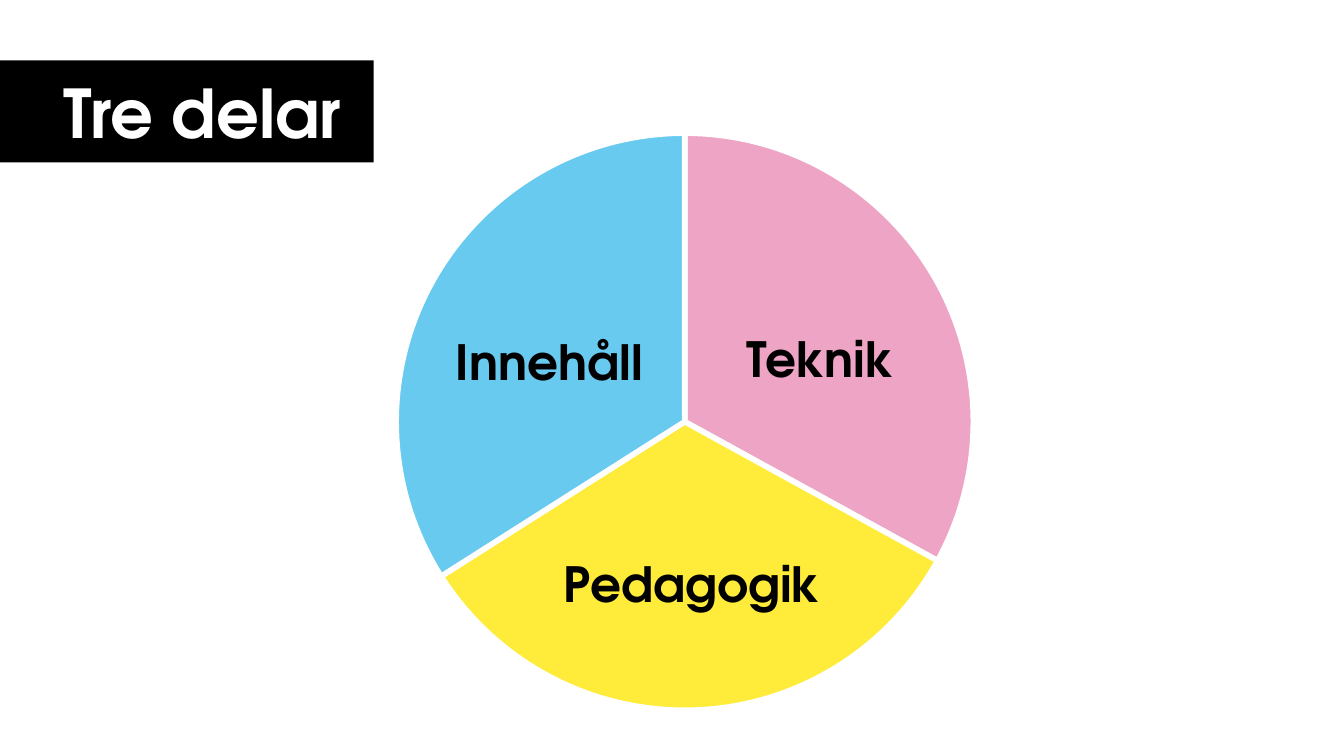
"""Build the slide "Tre delar": a three-part pie chart with labels."""
from lxml import etree
from pptx import Presentation
from pptx.chart.data import CategoryChartData
from pptx.dml.color import RGBColor
from pptx.enum.chart import XL_CHART_TYPE
from pptx.enum.shapes import MSO_SHAPE
from pptx.enum.text import MSO_ANCHOR, PP_ALIGN
from pptx.oxml.ns import qn
from pptx.util import Inches, Pt

FONT = "TeX Gyre Adventor"
BLACK = RGBColor(0x00, 0x00, 0x00)
WHITE = RGBColor(0xFF, 0xFF, 0xFF)
PINK = RGBColor(0xEE, 0xA4, 0xC5)
YELLOW = RGBColor(0xFF, 0xEC, 0x3A)
BLUE = RGBColor(0x68, 0xCA, 0xEE)


def set_text(tf, text, size, color, align):
    p = tf.paragraphs[0]
    p.text = text
    p.alignment = align
    p.font.name = FONT
    p.font.size = Pt(size)
    p.font.bold = True
    p.font.color.rgb = color


prs = Presentation()
prs.slide_width = Inches(10)
prs.slide_height = Inches(10 * 9 / 16)
s = prs.slides.add_slide(prs.slide_layouts[6])

title = s.shapes.add_shape(MSO_SHAPE.RECTANGLE, Inches(0), Inches(0.45), Inches(2.78), Inches(0.76))
title.shadow.inherit = False
title.fill.solid()
title.fill.fore_color.rgb = BLACK
title.line.fill.background()
tf = title.text_frame
tf.word_wrap = False
tf.vertical_anchor = MSO_ANCHOR.MIDDLE
tf.margin_left, tf.margin_right = Inches(0.47), Inches(0.2)
tf.margin_top = tf.margin_bottom = Inches(0.08)
set_text(tf, "Tre delar", 36, WHITE, PP_ALIGN.LEFT)

parts = [
    ("Teknik", 33, PINK, 5.08, 2.4, 2.05),
    ("Pedagogik", 33, YELLOW, 3.82, 4.07, 2.66),
    ("Innehåll", 34, BLUE, 3.12, 2.42, 1.94),
]

data = CategoryChartData()
data.categories = [part[0] for part in parts]
data.add_series("Series 1", [part[1] for part in parts])
chart = s.shapes.add_chart(
    XL_CHART_TYPE.PIE, Inches(1.71), Inches(0.74), Inches(6.69), Inches(4.88), data
).chart
chart.has_legend = False
chart.has_title = False
chart.font.name = FONT
chart.font.size = Pt(18)
chart.font.color.rgb = BLACK

plot = chart.plots[0]
plot.vary_by_categories = True
for i, (_, _, color, *_) in enumerate(parts):
    point = plot.series[0].points[i]
    point.format.fill.solid()
    point.format.fill.fore_color.rgb = color
    point.format.line.color.rgb = WHITE
    point.format.line.width = Pt(3)

plot_area = chart.element.find(".//" + qn("c:plotArea"))
layout = plot_area.find(qn("c:layout"))
if layout is None:
    layout = etree.Element(qn("c:layout"))
    plot_area.insert(0, layout)
manual = etree.SubElement(layout, qn("c:manualLayout"))
for tag, val in [("layoutTarget", "inner"), ("xMode", "edge"), ("yMode", "edge"),
                 ("x", "0.185"), ("y", "0.051"), ("w", "0.642"), ("h", "0.881")]:
    etree.SubElement(manual, qn("c:" + tag)).set("val", val)

for name, _, _, left, top, width in parts:
    tb = s.shapes.add_textbox(Inches(left), Inches(top), Inches(width), Inches(0.54))
    tb.text_frame.word_wrap = True
    set_text(tb.text_frame, name, 26, BLACK, PP_ALIGN.CENTER)

prs.save("out.pptx")
